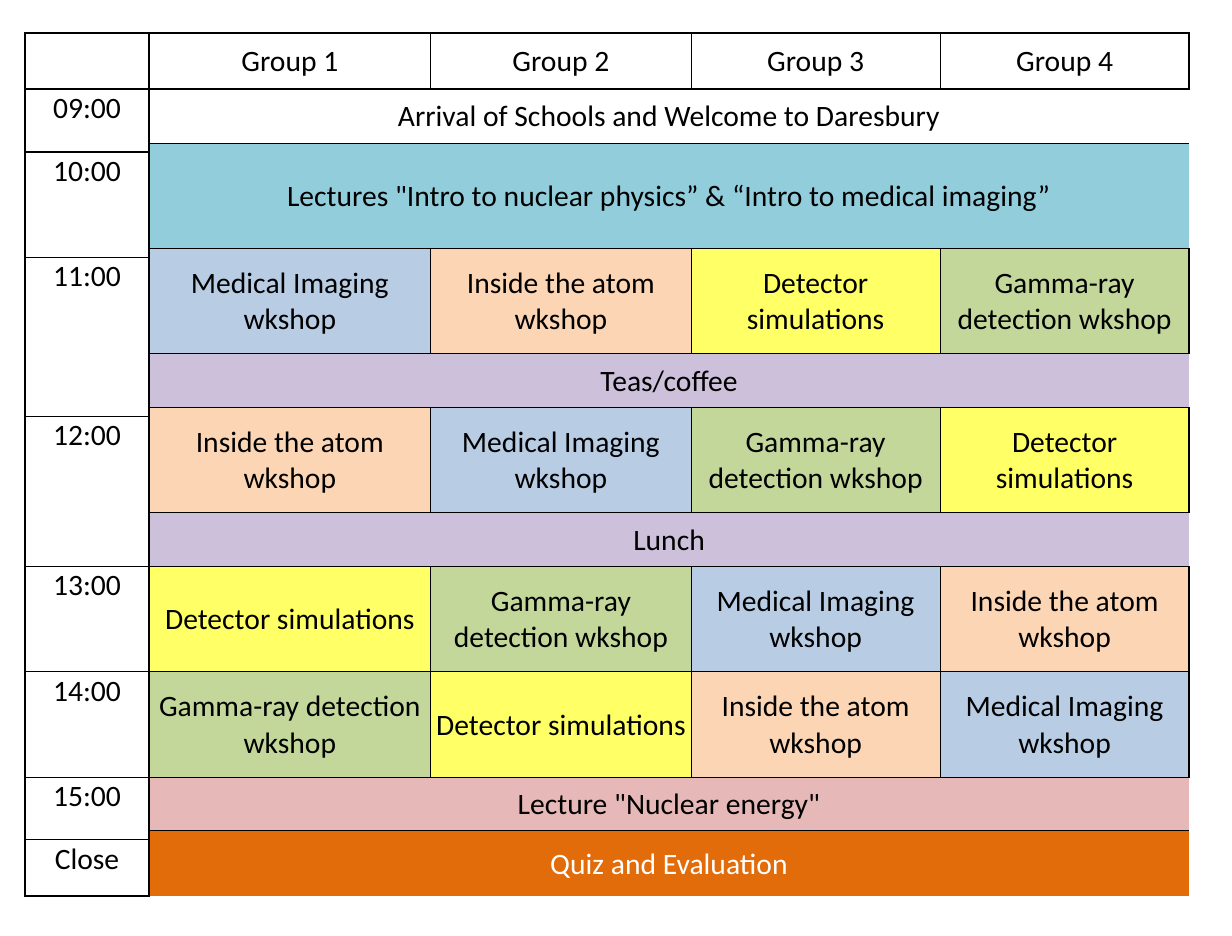
from dataclasses import dataclass

from lxml.etree import SubElement
from pptx import Presentation
from pptx.dml.color import RGBColor
from pptx.enum.text import MSO_ANCHOR, PP_ALIGN
from pptx.oxml.ns import qn
from pptx.util import Pt


@dataclass(frozen=True)
class Theme:
    font: str = "Calibri"
    size: float = 17
    ink: str = "000000"
    light: str = "FFFFFF"
    blue: str = "B8CCE4"
    peach: str = "FCD5B4"
    yellow: str = "FFFF66"
    green: str = "C4D79B"
    teal: str = "92CDDC"
    lilac: str = "CCC0DA"
    rose: str = "E6B8B7"
    orange: str = "E26B0A"
    thick: float = 1
    thin: float = 0.5
    plain_table: str = "{2D5ABB26-0587-4C30-8999-92F81FD0307C}"


THEME = Theme()


def put_text(tf, text, *, font, size, color, align=PP_ALIGN.CENTER):
    p = tf.paragraphs[0]
    p.alignment = align
    r = p.add_run()
    r.text = text
    r.font.name = font
    r.font.size = Pt(size)
    r.font.color.rgb = RGBColor.from_string(color)


class TimetableSlide:
    def __init__(self, prs, theme):
        self.theme = theme
        self.s = prs.slides.add_slide(prs.slide_layouts[6])

    def table(self, left, top, widths, heights):
        frame = self.s.shapes.add_table(
            len(heights), len(widths), Pt(left), Pt(top),
            Pt(sum(widths)), Pt(sum(heights)))
        for style in frame.element.iter(qn("a:tableStyleId")):
            style.text = self.theme.plain_table
        self.tbl = frame.table
        self.tbl.first_row = self.tbl.horz_banding = False
        for column, width in zip(self.tbl.columns, widths):
            column.width = Pt(width)
        for row, height in zip(self.tbl.rows, heights):
            row.height = Pt(height)

    def border(self, cell, side, width):
        ln = SubElement(cell._tc.get_or_add_tcPr(), qn(f"a:ln{side}"), w=str(Pt(width)))
        fill = SubElement(ln, qn("a:solidFill"))
        SubElement(fill, qn("a:srgbClr"), val=self.theme.ink)

    def outline(self, row, col, rows, cols):
        """Thick lines round the table, the header and the time column."""
        t = self.theme
        last_row, last_col = len(self.tbl.rows), len(self.tbl.columns)
        for i in range(row, row + rows):
            for j in range(col, col + cols):
                edges = (("L", j == col, j in (0, 1)),
                         ("R", j == col + cols - 1, j + 1 in (1, last_col)),
                         ("T", i == row, i in (0, 1)),
                         ("B", i == row + rows - 1, i + 1 in (1, last_row)))
                for side, on_edge, heavy in edges:
                    if on_edge:
                        self.border(self.tbl.cell(i, j), side, t.thick if heavy else t.thin)

    def block(self, row, col, text="", rows=1, cols=1, fill=None, color=None,
              anchor=MSO_ANCHOR.MIDDLE):
        t = self.theme
        cell = self.tbl.cell(row, col)
        if rows * cols > 1:
            cell.merge(self.tbl.cell(row + rows - 1, col + cols - 1))
        self.outline(row, col, rows, cols)
        cell.margin_left = cell.margin_right = cell.margin_top = Pt(0.7)
        cell.margin_bottom = 0
        cell.vertical_anchor = anchor
        if fill:
            cell.fill.solid()
            cell.fill.fore_color.rgb = RGBColor.from_string(fill)
        else:
            cell.fill.background()
        if text:
            put_text(cell.text_frame, text, font=t.font, size=t.size, color=color or t.ink)


# Table grid: head, single, offset, part-hour and full-hour rows
HEAD, SINGLE, OFFSET, PART, FULL = 32.4, 31, 5.2, 55.4, 60.5
HEIGHTS = [HEAD, SINGLE, OFFSET, PART, OFFSET, PART, SINGLE, OFFSET, PART,
           SINGLE, FULL, FULL, SINGLE, OFFSET, HEAD]
WIDTHS = [71.3, 162, 149.8, 143.2, 143.2]

# Start row, label, rows covered
TIMES = [(1, "09:00", 2), (3, "10:00", 2), (5, "11:00", 3), (8, "12:00", 2),
         (10, "13:00", 1), (11, "14:00", 1), (12, "15:00", 2), (14, "Close", 1)]

# Start row, label, rows covered, fill, text colour
SHARED = [
    (1, "Arrival of Schools and Welcome to Daresbury", 1, None, THEME.ink),
    (2, 'Lectures "Intro to nuclear physics” & “Intro to medical imaging”', 2,
     THEME.teal, THEME.ink),
    (6, "Teas/coffee", 1, THEME.lilac, THEME.ink),
    (9, "Lunch", 1, THEME.lilac, THEME.ink),
    (12, 'Lecture "Nuclear energy"', 1, THEME.rose, THEME.ink),
    (13, "Quiz and Evaluation", 2, THEME.orange, THEME.light),
]

WORKSHOPS = {
    "M": ("Medical Imaging wkshop", THEME.blue),
    "A": ("Inside the atom wkshop", THEME.peach),
    "D": ("Detector simulations", THEME.yellow),
    "G": ("Gamma-ray detection wkshop", THEME.green),
}
# Start row, rows covered, workshop of each group in turn
ROTATION = [(4, 2, "MADG"), (7, 2, "AMGD"), (10, 1, "DGMA"), (11, 1, "GDAM")]


def main():
    prs = Presentation()
    prs.slide_width, prs.slide_height = Pt(708.5), Pt(538.5)
    slide = TimetableSlide(prs, THEME)
    slide.table(14.4, 18.9, WIDTHS, HEIGHTS)

    # Header row
    slide.block(0, 0)
    for group in range(1, 5):
        slide.block(0, group, f"Group {group}")

    # Time column
    for row, label, rows in TIMES:
        slide.block(row, 0, label, rows=rows, anchor=MSO_ANCHOR.TOP)

    # Sessions for all groups
    for row, label, rows, fill, color in SHARED:
        slide.block(row, 1, label, rows=rows, cols=4, fill=fill, color=color)

    # Rotating workshops
    for row, rows, order in ROTATION:
        for group, key in enumerate(order, 1):
            label, fill = WORKSHOPS[key]
            slide.block(row, group, label, rows=rows, fill=fill)

    prs.save("out.pptx")


if __name__ == "__main__":
    main()
